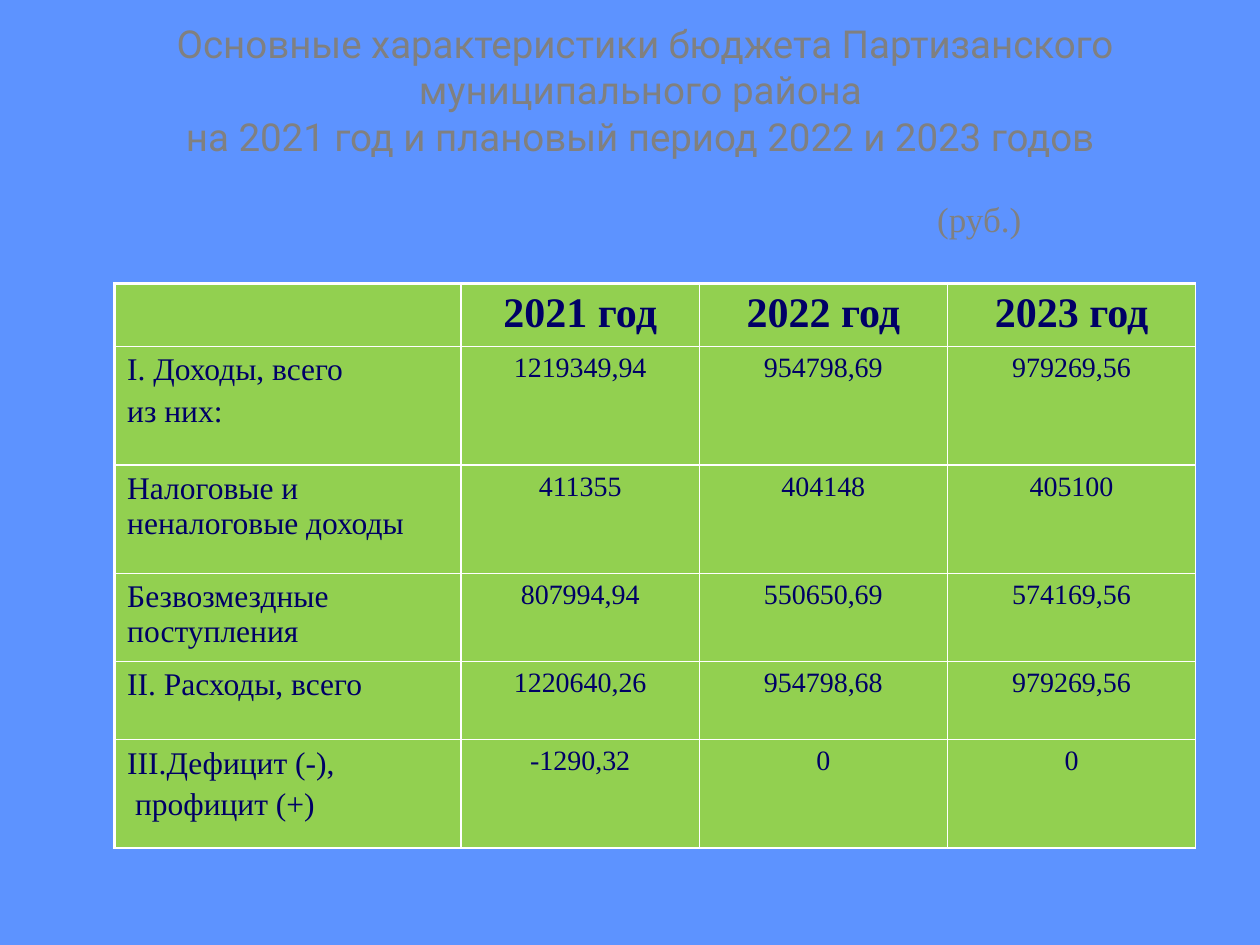
from lxml.etree import SubElement
from pptx import Presentation
from pptx.dml.color import RGBColor
from pptx.enum.text import MSO_ANCHOR, PP_ALIGN
from pptx.oxml.ns import qn
from pptx.util import Inches, Pt

SERIF = "Times New Roman"
HEADER = {"name": SERIF, "size": Pt(24), "bold": True}
LABEL = {"name": SERIF, "size": Pt(18), "bold": False}
VALUE = {"name": SERIF, "size": Pt(16), "bold": False}

COLUMNS = [2.75, 1.89, 1.97, 1.97]
ROWS = [
    (0.5, "", "2021 год", "2022 год", "2023 год"),
    (0.94, "I. Доходы, всего\nиз них:", "1219349,94", "954798,69", "979269,56"),
    (0.86, "Налоговые и неналоговые доходы", "411355", "404148", "405100"),
    (0.65, "Безвозмездные поступления", "807994,94", "550650,69", "574169,56"),
    (0.62, "II. Расходы, всего", "1220640,26", "954798,68", "979269,56"),
    (0.86, "III.Дефицит (-),\n профицит (+)", "-1290,32", "0", "0"),
]


def color(value):
    return RGBColor.from_string(value)


def style(font, formats, rgb):
    for key, value in formats.items():
        setattr(font, key, value)
    font.color.rgb = color(rgb)


def set_borders(cell, widths):
    tcPr = cell._tc.get_or_add_tcPr()
    for i, (side, width) in enumerate(widths.items()):
        ln = SubElement(tcPr, qn(f"a:ln{side}"), w=str(Pt(width)))
        fill = SubElement(ln, qn("a:solidFill"))
        SubElement(fill, qn("a:srgbClr"), val="FFFFFF")
        # Border lines come before the cell fill
        tcPr.remove(ln)
        tcPr.insert(i, ln)


def add_title(slide, x, y, w, h):
    tf = slide.shapes.add_textbox(Inches(x), Inches(y), Inches(w), Inches(h)).text_frame
    tf.word_wrap = True
    tf.vertical_anchor = MSO_ANCHOR.MIDDLE
    p = tf.paragraphs[0]
    p.text = ("Основные характеристики бюджета Партизанского муниципального района \v"
              "на 2021 год и плановый период 2022 и 2023 годов ")
    p.alignment = PP_ALIGN.CENTER
    style(p.font, {"name": "Roboto", "size": Pt(22)}, "808080")

    # Unit of measure, indented to stand over the last column
    p = tf.add_paragraph()
    p.text = "(руб.)"
    p.space_before = Pt(22)
    p._p.get_or_add_pPr().set("marL", str(Inches(6.48)))
    style(p.font, {"name": SERIF, "size": Pt(20)}, "808080")


def fill_cell(cell, text, formats, centered):
    cell.fill.solid()
    cell.fill.fore_color.rgb = color("92D050")
    cell.text = text
    for i, p in enumerate(cell.text_frame.paragraphs):
        p.alignment = PP_ALIGN.CENTER if centered else PP_ALIGN.LEFT
        if i:
            p.space_before = Pt(3.6)
        style(p.font, formats, "000066")


def add_budget_table(slide, x, y, w, h):
    table = slide.shapes.add_table(len(ROWS), len(COLUMNS), Inches(x), Inches(y),
                                   Inches(w), Inches(h)).table
    table.first_row = table.horz_banding = False
    for column, width in zip(table.columns, COLUMNS):
        column.width = Inches(width)
    for r, (height, *texts) in enumerate(ROWS):
        table.rows[r].height = Inches(height)
        for c, text in enumerate(texts):
            cell = table.cell(r, c)
            formats = HEADER if r == 0 else VALUE if c else LABEL
            fill_cell(cell, text, formats, r == 0 or c > 0)
            # Heavier line along the left and top edges
            set_borders(cell, {"L": 1 if c else 2.25, "R": 1,
                               "T": 1 if r else 2.25, "B": 1})


def main():
    prs = Presentation()
    prs.slide_width, prs.slide_height = Inches(10), Inches(7.5)
    s = prs.slides.add_slide(prs.slide_layouts[6])
    s.background.fill.solid()
    s.background.fill.fore_color.rgb = color("5D93FF")
    add_title(s, 0.86, 0.23, 8.52, 1.6)
    add_budget_table(s, 0.91, 2.25, sum(COLUMNS), sum(row[0] for row in ROWS))
    prs.save("out.pptx")


if __name__ == "__main__":
    main()
